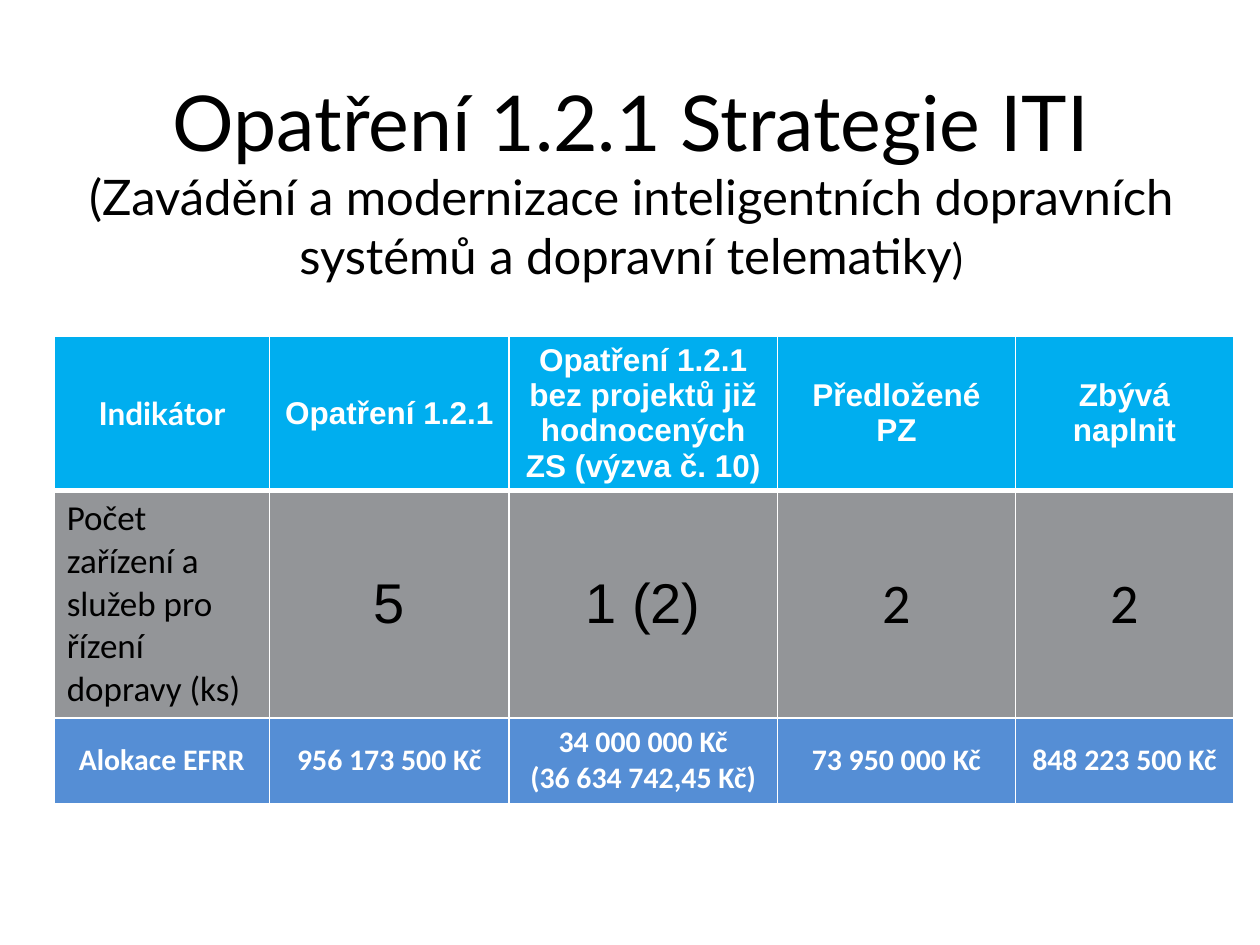
from dataclasses import dataclass

from lxml.etree import SubElement
from pptx import Presentation
from pptx.dml.color import RGBColor
from pptx.enum.text import MSO_ANCHOR, MSO_AUTO_SIZE, PP_ALIGN
from pptx.oxml.ns import qn
from pptx.util import Pt


@dataclass(frozen=True)
class Theme:
    black: str = "000000"
    white: str = "FFFFFF"
    header_fill: str = "00AEEF"
    indicator_fill: str = "939598"
    allocation_fill: str = "558ED5"
    title_font: str = "Lato"
    body_font: str = "Calibri"
    number_font: str = "Arial"
    title_size: int = 44
    subtitle_size: int = 28
    bracket_size: int = 24
    header_size: int = 18
    label_size: int = 20
    number_size: int = 32
    allocation_size: int = 17


THEME = Theme()

COLUMN_WIDTHS = [123.12, 136.8, 153.36, 136.08, 124.56]
ROW_HEIGHTS = [88, 130, 48.5]
HEADERS = [
    "Indikátor",
    "Opatření 1.2.1",
    "Opatření 1.2.1 bez projektů již hodnocených ZS (výzva č. 10)",
    "Předložené PZ",
    "Zbývá naplnit",
]
INDICATOR = "Počet zařízení a služeb pro řízení dopravy (ks)"
COUNTS = ["5", "1 (2)", "2", "2"]
ALLOCATIONS = [
    "Alokace EFRR",
    "956 173 500 Kč",
    "34 000 000 Kč\n(36 634 742,45 Kč)",
    "73 950 000 Kč",
    "848 223 500 Kč",
]


def set_font(font, name, size, color, bold=False):
    font.name = name
    font.size = Pt(size)
    font.bold = bold
    font.color.rgb = RGBColor.from_string(color)


def add_title(slide):
    title = slide.shapes.title
    title.left, title.top, title.width, title.height = Pt(36.72), Pt(31.68), Pt(648), Pt(141.84)
    frame = title.text_frame
    frame.word_wrap = True
    frame.auto_size = MSO_AUTO_SIZE.NONE
    frame.vertical_anchor = MSO_ANCHOR.MIDDLE
    paragraph = frame.paragraphs[0]
    paragraph.alignment = PP_ALIGN.CENTER
    set_font(paragraph.font, THEME.title_font, THEME.title_size, THEME.black)

    heading = paragraph.add_run()
    heading.text = "Opatření 1.2.1 Strategie ITI"
    paragraph.add_line_break()
    subtitle = paragraph.add_run()
    subtitle.text = "(Zavádění a modernizace inteligentních dopravních systémů a dopravní telematiky"
    subtitle.font.size = Pt(THEME.subtitle_size)
    bracket = paragraph.add_run()
    bracket.text = ")"
    bracket.font.size = Pt(THEME.bracket_size)


def set_borders(cell, bottom_width, top_width):
    properties = cell._tc.get_or_add_tcPr()
    widths = {"a:lnL": 1, "a:lnR": 1, "a:lnT": top_width, "a:lnB": bottom_width}
    for tag, width in widths.items():
        line = SubElement(properties, qn(tag), w=str(Pt(width)))
        fill = SubElement(line, qn("a:solidFill"))
        SubElement(fill, qn("a:srgbClr"), val=THEME.white)


def fill_cell(cell, text, fill, font, size, color, bold=False, alignment=PP_ALIGN.CENTER):
    cell.fill.solid()
    cell.fill.fore_color.rgb = RGBColor.from_string(fill)
    cell.vertical_anchor = MSO_ANCHOR.MIDDLE
    cell.text = text
    for paragraph in cell.text_frame.paragraphs:
        paragraph.alignment = alignment
        set_font(paragraph.font, font, size, color, bold)


def add_indicator_table(slide):
    frame = slide.shapes.add_table(
        len(ROW_HEIGHTS), len(COLUMN_WIDTHS),
        Pt(30.96), Pt(192.24), Pt(sum(COLUMN_WIDTHS)), Pt(sum(ROW_HEIGHTS)))
    table = frame.table
    for column, width in zip(table.columns, COLUMN_WIDTHS):
        column.width = Pt(width)
    for index, (row, height) in enumerate(zip(table.rows, ROW_HEIGHTS)):
        row.height = Pt(height)
        for cell in row.cells:
            set_borders(cell, 3 if index == 0 else 1, 3 if index == 1 else 1)

    # Header row
    for column, text in enumerate(HEADERS):
        font = THEME.title_font if column == 0 else THEME.number_font
        fill_cell(table.cell(0, column), text, THEME.header_fill, font,
                  THEME.header_size, THEME.white, bold=True)

    # Indicator row: label, then counts
    fill_cell(table.cell(1, 0), INDICATOR, THEME.indicator_fill, THEME.body_font,
              THEME.label_size, THEME.black, alignment=PP_ALIGN.LEFT)
    for column, text in enumerate(COUNTS, start=1):
        cell = table.cell(1, column)
        font = THEME.number_font if column < 3 else THEME.body_font
        fill_cell(cell, text, THEME.indicator_fill, font, THEME.number_size, THEME.black)
        if column >= 3:
            cell.margin_left = cell.margin_right = cell.margin_top = cell.margin_bottom = Pt(0)

    # Allocation row
    for column, text in enumerate(ALLOCATIONS):
        fill_cell(table.cell(2, column), text, THEME.allocation_fill, THEME.body_font,
                  THEME.allocation_size, THEME.white, bold=True)


def main():
    presentation = Presentation()
    presentation.slide_width, presentation.slide_height = Pt(720), Pt(540)
    slide = presentation.slides.add_slide(presentation.slide_layouts[5])
    add_title(slide)
    add_indicator_table(slide)
    presentation.save("out.pptx")


if __name__ == "__main__":
    main()
